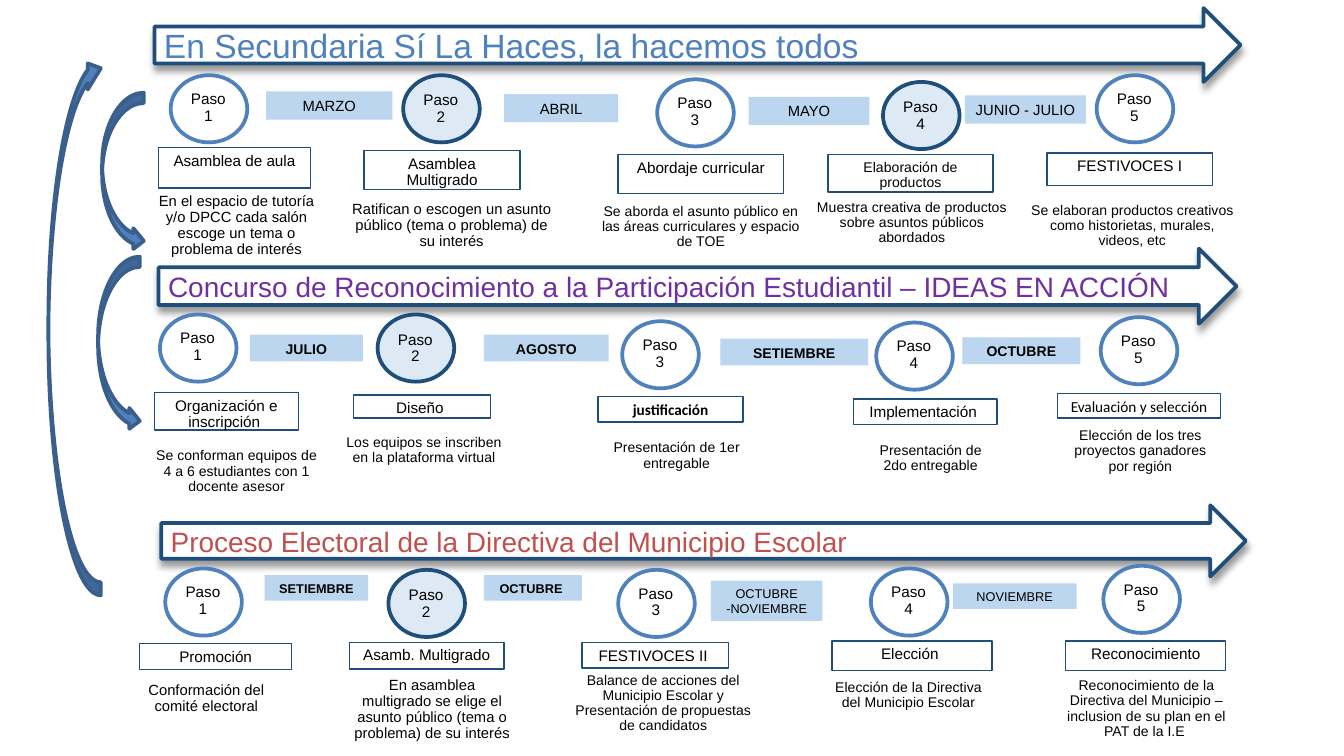
from dataclasses import dataclass
from typing import NamedTuple

from lxml import etree
from pptx import Presentation
from pptx.dml.color import RGBColor
from pptx.enum.shapes import MSO_SHAPE
from pptx.enum.text import MSO_ANCHOR, MSO_AUTO_SIZE, PP_ALIGN
from pptx.oxml.ns import qn
from pptx.util import Cm, Pt

RECTANGLE, CIRCLE, BANNER = MSO_SHAPE.RECTANGLE, MSO_SHAPE.OVAL, MSO_SHAPE.RIGHT_ARROW
CURVED_LEFT, CURVED_RIGHT = MSO_SHAPE.CURVED_LEFT_ARROW, MSO_SHAPE.CURVED_RIGHT_ARROW
LEFT, CENTER = PP_ALIGN.LEFT, PP_ALIGN.CENTER
TOP, MIDDLE = MSO_ANCHOR.TOP, MSO_ANCHOR.MIDDLE
FIXED, GROW = MSO_AUTO_SIZE.NONE, MSO_AUTO_SIZE.SHAPE_TO_FIT_TEXT
SLIDE_WIDTH = 10


@dataclass(frozen=True)
class Theme:
    font: str = "Arial"
    alternate_font: str = "Calibri"
    text: str = "000000"
    paper: str = "FFFFFF"
    outline: str = "1E4E79"
    blue: str = "4F81BD"
    purple: str = "7030A0"
    red: str = "C0504D"
    highlight: str = "DDEAF6"
    month: str = "BBD6EE"
    return_outline: str = "3A5F8C"
    lead_size: float = 18
    banner_size: float = 15
    label_size: float = 8.2
    body_size: float = 7.9
    small_size: float = 7.5
    tiny_size: float = 6.8
    thick: float = 2
    thin: float = 0.75


THEME = Theme()
BODY, SMALL, TINY = THEME.body_size, THEME.small_size, THEME.tiny_size


class Box(NamedTuple):
    """Left, top, width and height, in inches."""
    left: float
    top: float
    width: float
    height: float


class Style(NamedTuple):
    size: float
    bold: bool = False
    font: str = THEME.font
    color: str = THEME.text


LABEL = Style(THEME.label_size)


class Step(NamedTuple):
    circle: tuple[float, float]
    label_box: Box
    label: str
    detail_box: Box
    detail: str
    detail_size: float = SMALL
    label_style: Style = LABEL
    highlighted: bool = False
    label_fill: str | None = None


class Month(NamedTuple):
    box: Box
    name: str
    style: Style


class Process(NamedTuple):
    banner: Box
    title: str
    title_style: Style
    steps: list[Step]
    months: list[Month]


PROCESSES = [
    Process(
        Box(1.15, 0.06, 8.08, 0.55), "En Secundaria Sí La Haces, la hacemos todos",
        Style(THEME.lead_size, color=THEME.blue),
        [Step((1.27, 0.56), Box(1.18, 1.1, 1.13, 0.3), "Asamblea de aula", Box(1.08, 1.4, 1.36, 0.64),
              "En el espacio de tutoría y/o DPCC cada salón escoge un tema o problema de interés", BODY),
         Step((3, 0.56), Box(2.71, 1.12, 1.16, 0.29), "Asamblea Multigrado", Box(2.54, 1.46, 1.64, 0.45),
              "Ratifican o escogen un asunto público (tema o problema) de su interés", BODY, highlighted=True),
         Step((4.89, 0.59), Box(4.6, 1.15, 1.23, 0.29), "Abordaje curricular", Box(4.36, 1.48, 1.71, 0.41),
              "Se aborda el asunto público en las áreas curriculares y espacio de TOE"),
         Step((6.57, 0.61), Box(6.16, 1.15, 1.23, 0.28), "Elaboración de productos", Box(5.93, 1.45, 1.71, 0.6),
              "Muestra creativa de productos sobre asuntos públicos abordados",
              label_style=Style(SMALL), highlighted=True),
         Step((8.16, 0.56), Box(7.79, 1.14, 1.23, 0.24), "FESTIVOCES I", Box(7.57, 1.47, 1.71, 0.36),
              "Se elaboran productos creativos como historietas, murales, videos, etc")],
        [Month(Box(1.98, 0.68, 0.94, 0.21), "MARZO", Style(BODY)),
         Month(Box(3.75, 0.7, 0.85, 0.21), "ABRIL", Style(BODY)),
         Month(Box(5.57, 0.72, 0.9, 0.21), "MAYO", Style(BODY)),
         Month(Box(7.18, 0.71, 0.9, 0.21), "JUNIO - JULIO ", Style(BODY))]),
    Process(
        Box(1.18, 1.85, 8.02, 0.56),
        "Concurso de Reconocimiento a la Participación Estudiantil – IDEAS EN ACCIÓN",
        Style(THEME.banner_size, color=THEME.purple),
        [Step((1.19, 2.34), Box(1.15, 2.92, 1.07, 0.28), "Organización e inscripción ",
              Box(1.07, 3.3, 1.38, 0.44), "Se conforman equipos de 4 a 6 estudiantes con 1 docente asesor"),
         Step((2.81, 2.34), Box(2.63, 2.94, 1.02, 0.17), "Diseño ", Box(2.49, 3.2, 1.33, 0.34),
              "Los equipos se inscriben en la plataforma virtual", highlighted=True),
         Step((4.63, 2.39), Box(4.45, 2.95, 1.08, 0.19), "justificación", Box(4.47, 3.24, 1.13, 0.43),
              "Presentación de 1er entregable", label_fill=THEME.paper,
              label_style=Style(THEME.label_size, True, THEME.alternate_font)),
         Step((6.52, 2.4), Box(6.35, 2.97, 1.07, 0.19), "Implementación ", Box(6.41, 3.26, 1.03, 0.43),
              "Presentación de 2do entregable", label_fill=THEME.paper),
         Step((8.19, 2.36), Box(7.87, 2.93, 1.21, 0.18), "Evaluación y selección",
              Box(7.92, 3.15, 1.13, 0.43), "Elección de los tres proyectos ganadores por región",
              label_fill=THEME.paper, label_style=Style(THEME.label_size, font=THEME.alternate_font))],
        [Month(Box(1.86, 2.49, 0.84, 0.2), "JULIO", Style(SMALL, True)),
         Month(Box(3.6, 2.49, 0.93, 0.2), "AGOSTO", Style(SMALL, True)),
         Month(Box(5.36, 2.52, 1.1, 0.2), "SETIEMBRE", Style(SMALL, True)),
         Month(Box(7.16, 2.51, 0.88, 0.2), "OCTUBRE", Style(SMALL, True))]),
    Process(
        Box(1.2, 3.76, 8.07, 0.53), "Proceso Electoral de la Directiva del Municipio Escolar",
        Style(THEME.banner_size, color=THEME.red),
        [Step((1.23, 4.23), Box(1.04, 4.79, 1.13, 0.19), "Promoción", Box(0.87, 5.04, 1.33, 0.34),
              "Conformación del comité electoral", BODY),
         Step((2.89, 4.24), Box(2.6, 4.78, 1.15, 0.2), "Asamb. Multigrado", Box(2.56, 5, 1.31, 0.64),
              "En asamblea multigrado se elige el asunto público (tema o problema) de su interés",
              BODY, highlighted=True),
         Step((4.6, 4.24), Box(4.33, 4.78, 1.09, 0.19), "FESTIVOCES II ", Box(4.19, 4.97, 1.49, 0.62),
              "Balance de acciones del Municipio Escolar y\nPresentación de propuestas de candidatos"),
         Step((6.48, 4.23), Box(6.19, 4.77, 1.19, 0.22), "Elección ", Box(6.08, 5.02, 1.36, 0.36),
              "Elección de la Directiva del Municipio Escolar"),
         Step((8.21, 4.21), Box(7.93, 4.77, 1.19, 0.22), "Reconocimiento", Box(7.85, 5.01, 1.36, 0.36),
              "Reconocimiento de la Directiva del Municipio – inclusion de su plan en el PAT de la I.E ")],
        [Month(Box(1.97, 4.28, 0.77, 0.19), "SETIEMBRE", Style(TINY, True)),
         Month(Box(3.6, 4.28, 0.73, 0.19), "OCTUBRE ", Style(TINY, True)),
         Month(Box(5.29, 4.32, 0.83, 0.3), "OCTUBRE -NOVIEMBRE", Style(TINY)),
         Month(Box(7.09, 4.34, 0.92, 0.19), "NOVIEMBRE", Style(TINY))]),
]

RETURN_ARROWS = [
    (CURVED_LEFT, Box(0.36, 0.41, 0.39, 4.02), 180),
    (CURVED_RIGHT, Box(0.76, 0.69, 0.31, 1.18), 0),
    (CURVED_RIGHT, Box(0.73, 1.91, 0.31, 1.3), 0),
]


def length(inches: float) -> Cm:
    return Cm(inches * 2.54)


def write(shape, text: str, style: Style, align=CENTER, anchor=TOP, fit=FIXED, spacing=0.9) -> None:
    frame = shape.text_frame
    frame.text = text
    side, edge = length(0.07), length(0.04)
    frame_format = {"word_wrap": True, "auto_size": fit, "vertical_anchor": anchor, "margin_left": side,
                    "margin_right": side, "margin_top": edge, "margin_bottom": edge}
    for attribute, value in frame_format.items():
        setattr(frame, attribute, value)
    font_format = {"name": style.font, "size": Pt(style.size), "bold": style.bold}
    for paragraph in frame.paragraphs:
        paragraph.alignment, paragraph.line_spacing = align, spacing
        font = paragraph.runs[0].font
        for attribute, value in font_format.items():
            setattr(font, attribute, value)
        font.color.rgb = RGBColor.from_string(style.color)


def draw_shape(slide, kind, box: Box, fill: str | None, line: str | None, weight: float = THEME.thick):
    shape = slide.shapes.add_shape(kind, *map(length, box))
    shape.shadow.inherit = False
    if fill:
        shape.fill.solid()
        shape.fill.fore_color.rgb = RGBColor.from_string(fill)
    else:
        shape.fill.background()
    if line:
        shape.line.color.rgb = RGBColor.from_string(line)
        shape.line.width = Pt(weight)
    else:
        shape.line.fill.background()
    return shape


def draw_text(slide, box: Box, text: str, style: Style) -> None:
    write(slide.shapes.add_textbox(*map(length, box)), text, style)


def draw_banner(slide, process: Process) -> None:
    banner = draw_shape(slide, BANNER, process.banner, THEME.paper, THEME.outline)
    effects = banner._element.spPr.find(qn("a:effectLst"))
    shadow = etree.SubElement(effects, qn("a:outerShdw"), blurRad=str(Pt(4)), dist=str(Pt(3)),
                              dir="5400000", rotWithShape="0")
    black = etree.SubElement(shadow, qn("a:srgbClr"), val="000000")
    etree.SubElement(black, qn("a:alpha"), val="40000")
    write(banner, process.title, process.title_style, LEFT, MIDDLE, spacing=1.0)


def draw_step(slide, number: int, step: Step) -> None:
    left, top = step.circle
    fill, line, drop = ((THEME.highlight, THEME.outline, 0.09) if step.highlighted
                        else (THEME.paper, THEME.blue, 0.08))
    draw_shape(slide, CIRCLE, Box(left, top, 0.57, 0.5), fill, line)
    draw_text(slide, Box(left + 0.06, top + drop, 0.44, 0.3), f"Paso {number}", LABEL)
    label = draw_shape(slide, RECTANGLE, step.label_box, step.label_fill, THEME.outline, THEME.thin)
    write(label, step.label, step.label_style)
    draw_text(slide, step.detail_box, step.detail, Style(step.detail_size))


def draw_month(slide, month: Month) -> None:
    tag = draw_shape(slide, RECTANGLE, month.box, THEME.month, None)
    write(tag, month.name, month.style, fit=GROW, spacing=1.0)


def main() -> None:
    deck = Presentation()
    deck.slide_width, deck.slide_height = length(SLIDE_WIDTH), length(SLIDE_WIDTH * 9 / 16)
    slide = deck.slides.add_slide(deck.slide_layouts[6])
    for process in PROCESSES:
        draw_banner(slide, process)
        for number, step in enumerate(process.steps, 1):
            draw_step(slide, number, step)
        for month in process.months:
            draw_month(slide, month)
    for kind, box, rotation in RETURN_ARROWS:
        draw_shape(slide, kind, box, THEME.blue, THEME.return_outline).rotation = rotation
    deck.save("out.pptx")


if __name__ == "__main__":
    main()
